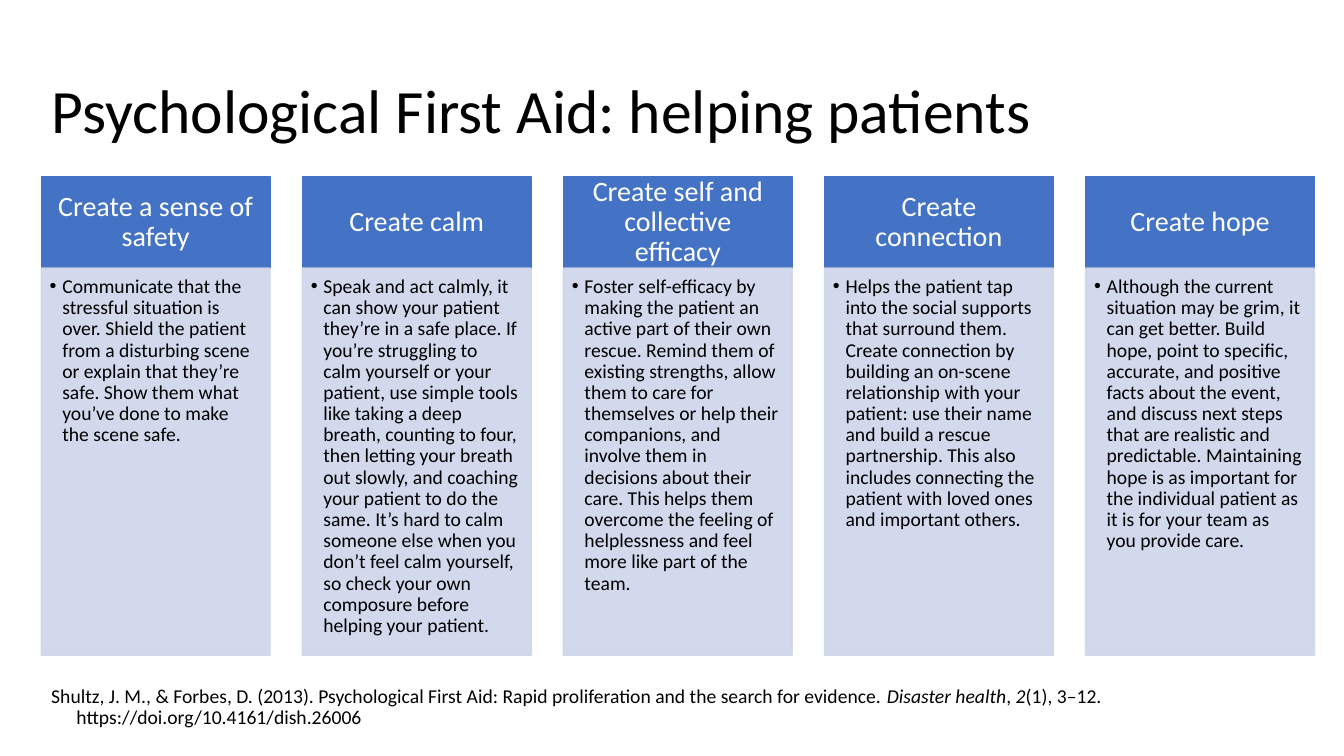
from lxml import etree
from pptx import Presentation
from pptx.dml.color import RGBColor
from pptx.enum.shapes import MSO_SHAPE as Shape
from pptx.enum.text import MSO_ANCHOR as Anchor, PP_ALIGN as Align
from pptx.oxml.ns import qn
from pptx.util import Pt

TITLE = "Psychological First Aid: helping patients"
PRINCIPLES = [
    ("Create a sense of safety",
     "Communicate that the stressful situation is over. Shield the patient from a disturbing scene "
     "or explain that they’re safe. Show them what you’ve done to make the scene safe."),
    ("Create calm",
     "Speak and act calmly, it can show your patient they’re in a safe place. If you’re struggling "
     "to calm yourself or your patient, use simple tools like taking a deep breath, counting to "
     "four, then letting your breath out slowly, and coaching your patient to do the same. It’s "
     "hard to calm someone else when you don’t feel calm yourself, so check your own composure "
     "before helping your patient."),
    ("Create self and collective efficacy",
     "Foster self-efficacy by making the patient an active part of their own rescue. Remind them "
     "of existing strengths, allow them to care for themselves or help their companions, and "
     "involve them in decisions about their care. This helps them overcome the feeling of "
     "helplessness and feel more like part of the team."),
    ("Create connection",
     "Helps the patient tap into the social supports that surround them. Create connection by "
     "building an on-scene relationship with your patient: use their name and build a rescue "
     "partnership. This also includes connecting the patient with loved ones and important others."),
    ("Create hope",
     "Although the current situation may be grim, it can get better. Build hope, point to specific, "
     "accurate, and positive facts about the event, and discuss next steps that are realistic and "
     "predictable. Maintaining hope is as important for the individual patient as it is for your "
     "team as you provide care."),
]
CITATION = [
    ("Shultz, J. M., & Forbes, D. (2013). Psychological First Aid: Rapid proliferation and the "
     "search for evidence. ", False),
    ("Disaster health", True),
    (", ", False),
    ("2", True),
    ("(1), 3–12. https://doi.org/10.4161/dish.26006", False),
]

FONT = "Calibri"
BLACK, WHITE, BLUE, PALE = "000000", "FFFFFF", "4472C4", "CFD5EA"
LEFT, COLUMN_WIDTH, COLUMN_PITCH = 29.5, 163.4, 186.5
HEADING_TOP, HEADING_HEIGHT, DETAIL_HEIGHT = 126, 65.5, 276.5


def colour(hex_text):
    return RGBColor.from_string(hex_text)


def write(holder, text, size=14, ink=BLACK, align=Align.LEFT, anchor=Anchor.TOP,
          insets=(7.2, 3.6, 7.2, 3.6), hanging=0, bullet=None, before=0):
    frame = holder.text_frame
    frame.word_wrap = True
    frame.vertical_anchor = anchor
    (frame.margin_left, frame.margin_top,
     frame.margin_right, frame.margin_bottom) = map(Pt, insets)
    paragraph = frame.paragraphs[0]
    paragraph.alignment = align
    paragraph.line_spacing = 0.9
    paragraph.space_before = Pt(before)
    properties = paragraph._p.get_or_add_pPr()
    if hanging:
        properties.set("marL", str(Pt(hanging)))
        properties.set("indent", str(-Pt(hanging)))
    if bullet:
        etree.SubElement(properties, qn("a:buFont")).set("typeface", "Arial")
        etree.SubElement(properties, qn("a:buChar")).set("char", bullet)
    for words, italic in [(text, False)] if isinstance(text, str) else text:
        run = paragraph.add_run()
        run.text = words
        run.font.name = FONT
        run.font.size = Pt(size)
        run.font.italic = italic
        run.font.color.rgb = colour(ink)


def add_panel(slide, left, top, height, tint, opacity=100):
    panel = slide.shapes.add_shape(Shape.RECTANGLE, Pt(left), Pt(top), Pt(COLUMN_WIDTH), Pt(height))
    panel.shadow.inherit = False
    panel.fill.solid()
    panel.fill.fore_color.rgb = colour(tint)
    panel.line.color.rgb = colour(tint)
    panel.line.width = Pt(1)
    if opacity < 100:
        for shade in panel._element.spPr.iter(qn("a:srgbClr")):
            etree.SubElement(shade, qn("a:alpha")).set("val", str(opacity * 1000))
    return panel


def add_text(slide, left, top, width, height, text, **style):
    write(slide.shapes.add_textbox(Pt(left), Pt(top), Pt(width), Pt(height)), text, **style)


def main():
    deck = Presentation()
    deck.slide_width, deck.slide_height = Pt(960), Pt(540)
    slide = deck.slides.add_slide(deck.slide_layouts[6])

    add_text(slide, LEFT, 28.8, 864.7, 104.4, TITLE, size=44, anchor=Anchor.MIDDLE)
    for column, (heading, detail) in enumerate(PRINCIPLES):
        left = LEFT + column * COLUMN_PITCH
        write(add_panel(slide, left, HEADING_TOP, HEADING_HEIGHT, BLUE), heading,
              size=20, ink=WHITE, align=Align.CENTER, anchor=Anchor.MIDDLE,
              insets=(11.2, 6.4, 11.2, 6.4))
        write(add_panel(slide, left, HEADING_TOP + HEADING_HEIGHT, DETAIL_HEIGHT, PALE, opacity=90),
              detail, insets=(6, 6, 8, 9), hanging=9, bullet="•")
    add_text(slide, LEFT, 486.7, 901.4, 41.8, CITATION, hanging=18, before=10)

    deck.save("out.pptx")


if __name__ == "__main__":
    main()
